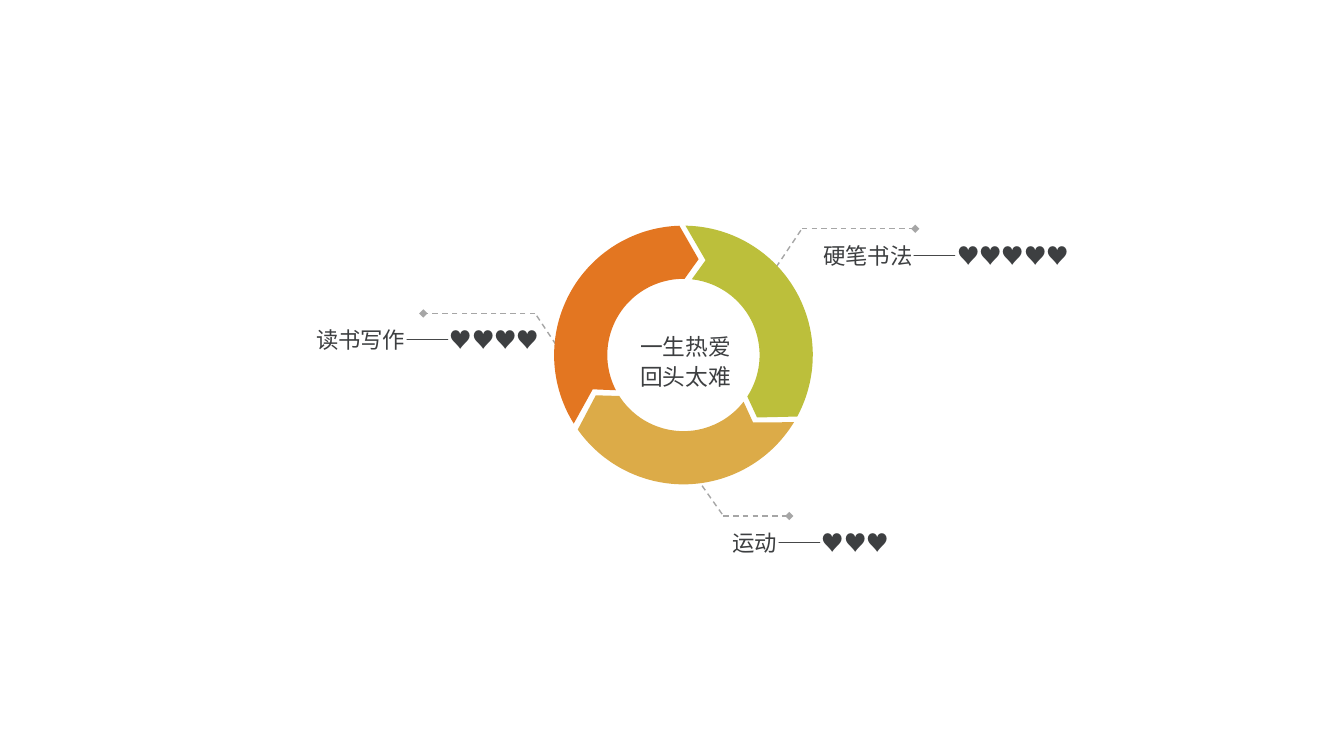
from math import cos, radians, sin

from lxml import etree
from pptx import Presentation
from pptx.dml.color import RGBColor
from pptx.enum.dml import MSO_LINE
from pptx.enum.shapes import MSO_CONNECTOR
from pptx.enum.text import MSO_ANCHOR, PP_ALIGN
from pptx.oxml.ns import qn
from pptx.util import Pt

LEFT, CENTER, RIGHT = PP_ALIGN.LEFT, PP_ALIGN.CENTER, PP_ALIGN.RIGHT
TOP, MIDDLE = MSO_ANCHOR.TOP, MSO_ANCHOR.MIDDLE
STRAIGHT = MSO_CONNECTOR.STRAIGHT
DASH = MSO_LINE.DASH

FONT = "Noto Sans CJK SC"
TEXT_COLOR, LEADER_COLOR = "3D3F41", "A6A6A6"

# Text, alignment, box left, box width, leader points (ring, bend, end)
HOBBIES = [
    ("运动——♥♥♥", LEFT, 516.2, 211.7, [(497.5, 341.3), (516.8, 368.6), (563.8, 368.6)]),
    ("硬笔书法——♥♥♥♥♥", LEFT, 581, 211.7, [(554.4, 190.8), (572.8, 163.4), (653.8, 163.4)]),
    ("读书写作——♥♥♥♥", RIGHT, 167.8, 224.6, [(401, 252), (382.3, 223.9), (302.4, 223.9)]),
]
LABEL_HEIGHT = 124.6
CENTER_LINES = ["一生热爱", "回头太难"]
CENTER_BOX = (435.6, 232.6, 108, 49.7)

RING_X, RING_Y = 488.2, 253.6
OUTER_RADIUS, INNER_RADIUS = 92.4, 54.4
# Colour, outer angles, tip offset, inner angles, notch offset (degrees clockwise from east)
SEGMENTS = [
    ("DCAB48", (31.3, 144.8), (-62.6, 28.8), (147.4, 37.9), (49.7, 48.2)),
    ("E37621", (148, 268.2), (10.8, -68.4), (270.8, 152.4), (-64.8, 24.5)),
    ("BCBF3B", (270.9, 388.4), (52.6, 44.6), (393, 276.3), (15.8, -67.7)),
]
ARC_STEPS = 60


def color(hex_code):
    return RGBColor.from_string(hex_code)


def add_text(slide, box, lines, size, alignment, spacing, anchor):
    shape = slide.shapes.add_textbox(*(Pt(value) for value in box))
    frame = shape.text_frame
    frame.word_wrap = True
    frame.vertical_anchor = anchor
    frame.text = "\n".join(lines)
    for paragraph in frame.paragraphs:
        paragraph.alignment = alignment
        paragraph.line_spacing = spacing
        for run in paragraph.runs:
            run.font.size = Pt(size)
            run.font.color.rgb = color(TEXT_COLOR)
            run.font.name = FONT
            for tag in ("a:ea", "a:sym"):
                etree.SubElement(run.font._element, qn(tag)).set("typeface", FONT)
    return frame


def add_leader(slide, start, end, has_diamond):
    connector = slide.shapes.add_connector(STRAIGHT, *(Pt(value) for value in start + end))
    connector.line.color.rgb = color(LEADER_COLOR)
    connector.line.width = Pt(1)
    connector.line.dash_style = DASH
    if has_diamond:
        etree.SubElement(connector.line._get_or_add_ln(), qn("a:tailEnd")).set("type", "diamond")
    etree.SubElement(connector._element.spPr, qn("a:effectLst"))


def arc(radius, first, last):
    """Return offsets from the ring centre along an arc."""
    angles = [radians(first + (last - first) * step / ARC_STEPS) for step in range(ARC_STEPS + 1)]
    return [(radius * cos(angle), radius * sin(angle)) for angle in angles]


def add_segment(slide, fill, outer, tip, inner, notch):
    offsets = arc(OUTER_RADIUS, *outer) + [tip] + arc(INNER_RADIUS, *inner) + [notch]
    points = [(Pt(RING_X + x), Pt(RING_Y + y)) for x, y in offsets]
    builder = slide.shapes.build_freeform(*points[0])
    builder.add_line_segments(points[1:], close=True)
    shape = builder.convert_to_shape()
    shape.shadow.inherit = False
    shape.fill.solid()
    shape.fill.fore_color.rgb = color(fill)
    shape.line.fill.background()


def main():
    presentation = Presentation()
    presentation.slide_width, presentation.slide_height = Pt(960), Pt(540)
    slide = presentation.slides.add_slide(presentation.slide_layouts[6])

    for text, alignment, left, width, (ring, bend, end) in HOBBIES:
        add_leader(slide, ring, bend, False)
        add_leader(slide, bend, end, True)
        add_text(slide, (left, end[1], width, LABEL_HEIGHT), [text], 16, alignment, 1.3, TOP)
    for segment in SEGMENTS:
        add_segment(slide, *segment)

    frame = add_text(slide, CENTER_BOX, CENTER_LINES, 16.2, CENTER, 1.1, MIDDLE)
    frame.margin_left = frame.margin_right = Pt(5)
    frame.margin_top = frame.margin_bottom = Pt(3)

    presentation.save("out.pptx")


if __name__ == "__main__":
    main()
